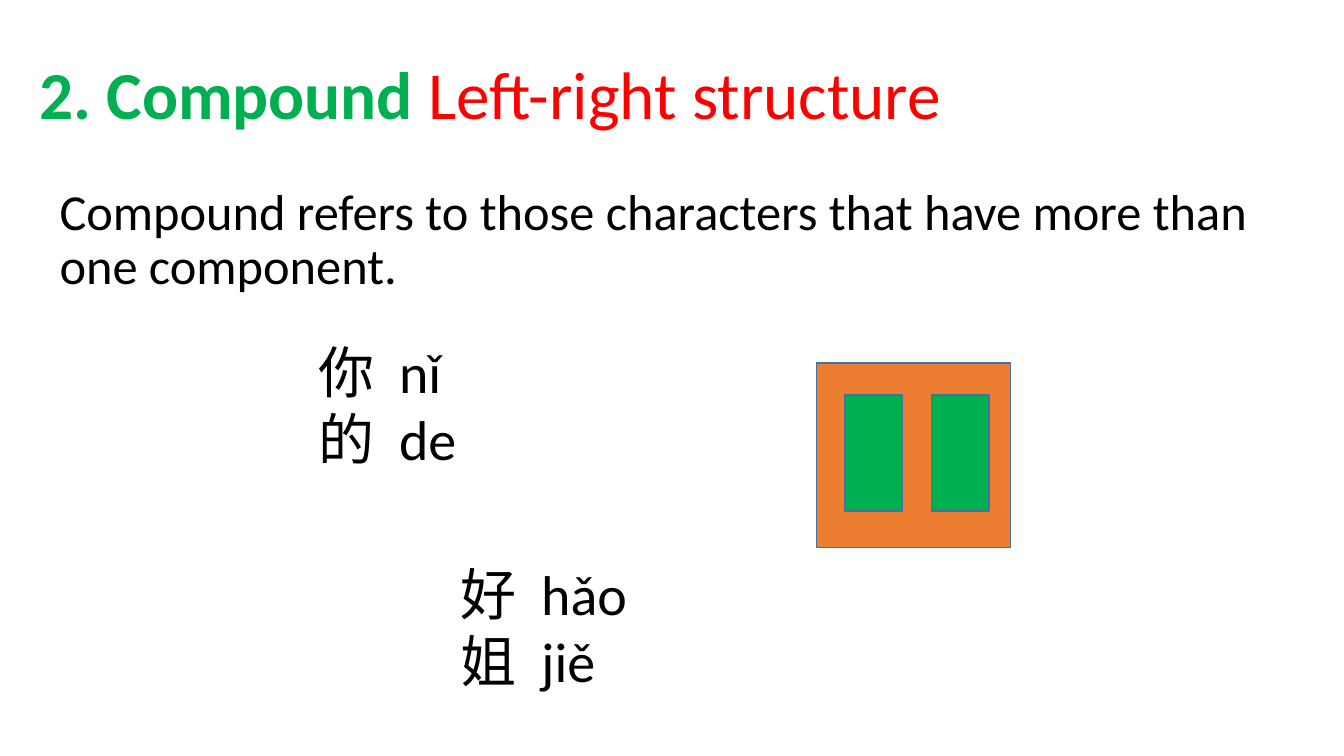
from dataclasses import dataclass

from lxml.etree import SubElement
from pptx import Presentation
from pptx.dml.color import RGBColor as Rgb
from pptx.enum.shapes import MSO_SHAPE as Preset
from pptx.enum.text import MSO_ANCHOR as Anchor, MSO_AUTO_SIZE as AutoSize, PP_ALIGN as Align
from pptx.oxml.ns import qn
from pptx.util import Inches, Pt


@dataclass(frozen=True)
class Theme:
    font: str = "Calibri"
    text: Rgb = Rgb(0x00, 0x00, 0x00)
    green: Rgb = Rgb(0x00, 0xB0, 0x50)
    red: Rgb = Rgb(0xFF, 0x00, 0x00)
    orange: Rgb = Rgb(0xED, 0x7D, 0x31)
    outline: Rgb = Rgb(0x43, 0x73, 0x9E)
    title_size: Pt = Pt(48)
    body_size: Pt = Pt(36)
    example_size: Pt = Pt(40)


class LessonSlide:
    def __init__(self, deck, theme):
        self.theme = theme
        self.slide = deck.slides.add_slide(deck.slide_layouts[1])

    def place(self, holder, left, top, width, height):
        holder.left, holder.top = Inches(left), Inches(top)
        holder.width, holder.height = Inches(width), Inches(height)
        holder.text_frame.auto_size = AutoSize.NONE
        holder.text_frame.word_wrap = True
        holder.text_frame.vertical_anchor = Anchor.TOP
        return holder.text_frame.paragraphs[0]

    def style(self, paragraph, size):
        paragraph.alignment = Align.LEFT
        paragraph.font.name = self.theme.font
        paragraph.font.size = size

    def title(self, parts, *box):
        heading = self.place(self.slide.shapes.title, *box)
        self.style(heading, self.theme.title_size)
        for words, color, bold in parts:
            part = heading.add_run()
            part.text = words
            part.font.color.rgb = color
            part.font.bold = bold

    def body(self, words, *box):
        definition = self.place(self.slide.placeholders[1], *box)
        definition.text = words
        self.style(definition, self.theme.body_size)
        definition.font.color.rgb = self.theme.text
        definition.line_spacing = 0.9
        definition.space_before = Pt(10)
        properties = definition._p.get_or_add_pPr()
        properties.set("marL", "0")
        properties.set("indent", "0")
        SubElement(properties, qn("a:buNone"))

    def examples(self, entries, left, top, width, height):
        box = self.slide.shapes.add_textbox(*map(Inches, (left, top, width, height)))
        frame = box.text_frame
        frame.word_wrap = False
        frame.text = "\n".join(f"{character}\t{pinyin}" for character, pinyin in entries)
        for entry in frame.paragraphs:
            self.style(entry, self.theme.example_size)
            entry.font.color.rgb = self.theme.text
            stops = SubElement(entry._p.get_or_add_pPr(), qn("a:tabLst"))
            SubElement(stops, qn("a:tab"), pos=str(Inches(0.8)), algn="l")

    def block(self, color, left, top, width, height):
        block = self.slide.shapes.add_shape(
            Preset.RECTANGLE, *map(Inches, (left, top, width, height)))
        block.shadow.inherit = False
        block.fill.solid()
        block.fill.fore_color.rgb = color
        block.line.color.rgb = self.theme.outline
        block.line.width = Pt(1)


def main():
    deck = Presentation()
    deck.slide_width, deck.slide_height = Inches(13.33), Inches(7.5)
    theme = Theme()
    lesson = LessonSlide(deck, theme)
    lesson.body("Compound refers to those characters that have more than one component.",
                0.49, 1.8, 12.72, 1.26)
    lesson.examples([("你", "nǐ"), ("的", "de")], 3.06, 3.3, 1.59, 1.45)
    lesson.examples([("好", "hǎo"), ("姐", "jiě")], 4.47, 5.5, 1.87, 1.45)
    lesson.title([("2. Compound ", theme.green, True),
                  ("Left-right structure", theme.red, False)],
                 0.29, 0.47, 11.66, 0.91)
    lesson.block(theme.orange, 8.1, 3.6, 1.92, 1.83)
    for component_left in (8.38, 9.24):
        lesson.block(theme.green, component_left, 3.92, 0.57, 1.15)
    deck.save("out.pptx")


if __name__ == "__main__":
    main()
